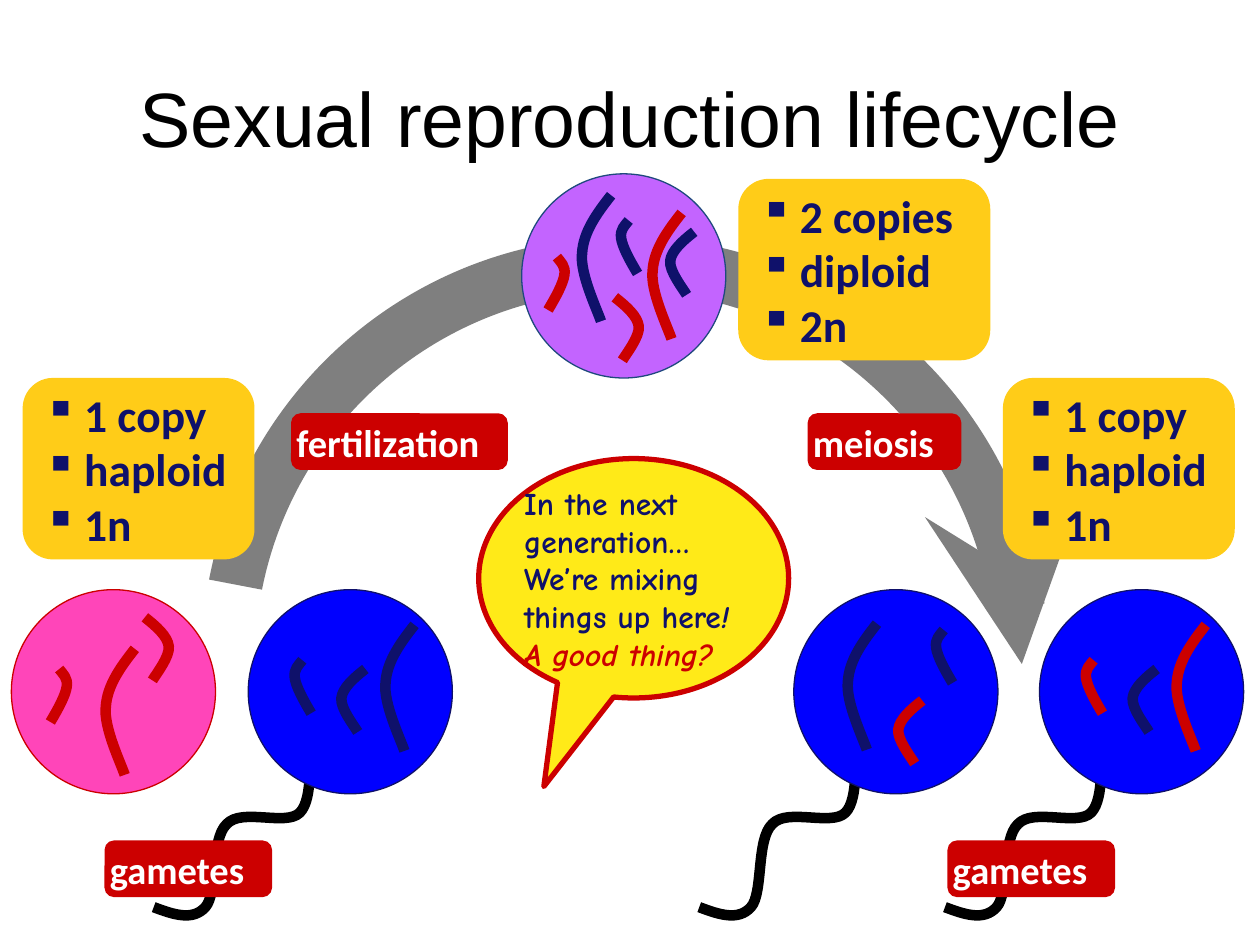
from dataclasses import dataclass

from lxml.etree import SubElement
from pptx import Presentation
from pptx.dml.color import RGBColor as Color
from pptx.enum.shapes import MSO_CONNECTOR as Connector, MSO_SHAPE as Preset
from pptx.enum.text import MSO_ANCHOR as Anchor, MSO_AUTO_SIZE as AutoSize, PP_ALIGN as Align
from pptx.oxml.ns import qn
from pptx.util import Inches, Pt

WIDTH, HEIGHT = Inches(10), Inches(7.5)
COLUMNS, ROWS = 100, 75
CELL = 16.2

# Cubic curves in grid units: a start point, then three points per segment.
STRANDS = {
    "hook": (1.4, [(0, 4.2), (0.6, 3.2), (1.2, 2.1), (1.3, 1.4),
                   (1.4, 0.7), (1, 0.4), (0.7, 0)]),
    "long": (2.5, [(2.5, 0), (1.4, 1.4), (0.3, 2.9), (0.2, 4.6),
                   (0, 6.2), (1.4, 9.1), (1.7, 10)]),
    "bend": (2, [(0, 0), (0.9, 0.7), (1.8, 1.5), (1.9, 2.3),
                 (2, 3.1), (0.9, 4.5), (0.6, 5)]),
}
TAIL = [(12.5, 0.3), (12.5, 0.1), (12.6, 0), (12.5, 1.1),
        (12.3, 2.2), (12.7, 5.8), (11.6, 6.9), (10.5, 8), (7, 6.5), (5.8, 7.8),
        (4.5, 9), (5.1, 13.3), (4.1, 14.4), (3.1, 15.5), (1.6, 15), (0, 14.4)]
TAIL_OFFSET = (-7.5, 10.8)
CYCLE_ARC = [(20.8, 46.8), (23.6, 32.7), (36.1, 22.7), (50.5, 23.1),
             (64.8, 23.5), (76.7, 34.3), (78.7, 48.5),
             (78.7, 48.5), (82.9, 47.9), (82.9, 47.9),
             (80.7, 31.6), (67.1, 19.3), (50.6, 18.8),
             (34.1, 18.3), (19.7, 29.8), (16.6, 46)]


@dataclass(frozen=True)
class Theme:
    red: str = "CC0000"
    navy: str = "0F116A"
    blue: str = "0000FF"
    pink: str = "FF45B9"
    purple: str = "C364FF"
    slate: str = "1F497D"
    gold: str = "FFCC18"
    yellow: str = "FFEA18"
    gray: str = "7F7F7F"
    black: str = "000000"
    white: str = "FFFFFF"
    thin: float = 0.75
    border: float = 3
    strand: float = 6
    arrow: float = 30

    @property
    def title(self):
        return {"name": "Arial", "size": Pt(44), "color": self.black}

    @property
    def facts(self):
        return {"name": "Calibri", "size": Pt(26), "bold": True, "color": self.navy}

    @property
    def label(self):
        return {"name": "Calibri", "size": Pt(22), "bold": True, "color": self.white}

    @property
    def speech(self):
        return {"name": "Comic Neue", "size": Pt(18), "bold": True, "color": self.navy}


class Board:
    def __init__(self, slide, theme):
        self.slide, self.theme = slide, theme

    @staticmethod
    def place(*lengths):
        """Turn alternating columns and rows into slide lengths."""
        units = (WIDTH / COLUMNS, HEIGHT / ROWS)
        return [round(length * units[i % 2]) for i, length in enumerate(lengths)]

    @staticmethod
    def paint(shape, fill=None, line=None, weight=0):
        shape.shadow.inherit = False
        if fill:
            shape.fill.solid()
            shape.fill.fore_color.rgb = Color.from_string(fill)
        else:
            shape.fill.background()
        if line:
            shape.line.color.rgb = Color.from_string(line)
            shape.line.width = Pt(weight)
        else:
            shape.line.fill.background()

    def preset(self, kind, area, **paint):
        shape = self.slide.shapes.add_shape(kind, *self.place(*area))
        self.paint(shape, **paint)
        return shape

    def curve(self, points, closed=False, **paint):
        """Build an outline, then turn each three segments into one cubic."""
        start, *rest = [self.place(*point) for point in points]
        builder = self.slide.shapes.build_freeform(*start)
        builder.add_line_segments(rest, close=closed)
        shape = builder.convert_to_shape()
        segments = list(shape._element.iter(qn("a:lnTo")))
        for first, second, third in zip(*[iter(segments)] * 3):
            first.tag = qn("a:cubicBezTo")
            for spare in (second, third):
                first.append(spare[0])
                spare.getparent().remove(spare)
        self.paint(shape, **paint)

    def arrow(self, start, end):
        arrow = self.slide.shapes.add_connector(
            Connector.STRAIGHT, *self.place(*start, *end))
        arrow.line.color.rgb = Color.from_string(self.theme.gray)
        arrow.line.width = Pt(self.theme.arrow)
        SubElement(arrow.line._get_or_add_ln(), qn("a:tailEnd"), type="stealth")
        SubElement(arrow._element.spPr, qn("a:effectLst"))

    def add_text(self, box, paragraphs, style, margins=(0, 0, 0, 0), bullet=None,
                 align=Align.LEFT, **frame_format):
        """Fill a box; each paragraph is a list of (words, style changes)."""
        frame = box.text_frame
        sides = ("margin_left", "margin_top", "margin_right", "margin_bottom")
        settings = dict(zip(sides, map(Inches, margins)))
        settings |= {"word_wrap": False, "vertical_anchor": Anchor.MIDDLE} | frame_format
        for name, value in settings.items():
            setattr(frame, name, value)
        for number, spans in enumerate(paragraphs):
            para = frame.add_paragraph() if number else frame.paragraphs[0]
            para.alignment = align
            if bullet:
                properties = para._p.get_or_add_pPr()
                properties.set("marL", str(Inches(0.32)))
                properties.set("indent", str(-Inches(0.32)))
                SubElement(properties, qn("a:buChar"), char=bullet)
            for words, changes in spans:
                for row, line in enumerate(words.split("\n")):
                    if row:
                        para.add_line_break()
                    span = para.add_run()
                    span.text = line
                    for name, value in (style | changes).items():
                        if name == "color":
                            span.font.color.rgb = Color.from_string(value)
                        else:
                            setattr(span.font, name, value)

    def title(self, words, area):
        box = self.slide.shapes.add_textbox(*self.place(*area))
        self.add_text(box, [[(words, {})]], self.theme.title,
                      align=Align.CENTER, word_wrap=True)

    def cell(self, left, top, fill, line, strands, tail=False):
        """Draw a cell; strands are (kind, column, row, colour, mirrored)."""
        if tail:
            across, down = TAIL_OFFSET
            self.curve([(left + across + x, top + down + y) for x, y in TAIL],
                       line=self.theme.black, weight=self.theme.strand)
        self.preset(Preset.OVAL, (left, top, CELL, CELL),
                    fill=fill, line=line, weight=self.theme.thin)
        for kind, column, row, color, mirrored in strands:
            width, points = STRANDS[kind]
            self.curve([(left + column + (width - x if mirrored else x), top + row + y)
                        for x, y in points], line=color, weight=self.theme.strand)

    def facts(self, left, top, width, lines):
        box = self.preset(Preset.ROUNDED_RECTANGLE, (left, top, width, 14.4),
                          fill=self.theme.gold)
        self.add_text(box, [[(line, {})] for line in lines], self.theme.facts,
                      margins=(0.1, 0, 0, 0), bullet="▪",
                      auto_size=AutoSize.SHAPE_TO_FIT_TEXT)

    def label(self, words, left, top, width):
        box = self.preset(Preset.ROUNDED_RECTANGLE, (left, top, width, 4.5),
                          fill=self.theme.red)
        self.add_text(box, [[(words, {})]], self.theme.label,
                      margins=(0.02,) * 4, auto_size=AutoSize.SHAPE_TO_FIT_TEXT)

    def callout(self, area, tip, paragraphs):
        box = self.preset(Preset.OVAL_CALLOUT, area, fill=self.theme.yellow,
                          line=self.theme.red, weight=self.theme.border)
        for index, share in enumerate(tip):
            box.adjustments[index] = share
        self.add_text(box, paragraphs, self.theme.speech)


def main():
    deck = Presentation()
    deck.slide_width, deck.slide_height = WIDTH, HEIGHT
    theme = Theme()
    board = Board(deck.slides.add_slide(deck.slide_layouts[6]), theme)
    red, navy = theme.red, theme.navy

    board.curve(CYCLE_ARC, closed=True, fill=theme.gray)
    board.arrow((80.2, 45.2), (81.1, 52.7))
    board.title("Sexual reproduction lifecycle", (5, 3, 90, 12.5))

    board.cell(0.9, 46.8, theme.pink, red, [
        ("hook", 3.1, 6.3, red, False), ("long", 7.3, 4.7, red, False),
        ("bend", 10.6, 2.2, red, False)])
    for left, color in ((19.7, navy), (82.5, red)):
        board.cell(left, 46.8, theme.blue, navy, [
            ("long", 10.7, 2.8, color, False), ("hook", 3.6, 5.6, color, True),
            ("bend", 7.3, 6.3, navy, True)], tail=True)
    board.cell(63, 46.8, theme.blue, navy, [
        ("long", 4.1, 2.7, navy, False), ("hook", 11.2, 3.2, navy, True),
        ("bend", 8.2, 8.8, red, True)], tail=True)
    board.cell(41.4, 13.8, theme.purple, theme.slate, [
        ("hook", 2.1, 6.6, red, False), ("long", 10.2, 3.1, red, False),
        ("bend", 7.4, 9.8, red, False), ("long", 4.6, 1.7, navy, False),
        ("hook", 7.8, 3.7, navy, True), ("bend", 11.7, 4.6, navy, True)])

    haploid = ("1 copy", "haploid", "1n")
    board.facts(1.8, 30, 18.4, haploid)
    board.facts(58.6, 14.2, 20, ("2 copies", "diploid", "2n"))
    board.facts(79.6, 30, 18.4, haploid)
    board.label("meiosis", 64.1, 32.8, 12.2)
    board.label("fertilization", 23.1, 32.8, 17.2)
    board.callout((38, 36.4, 24.6, 19), (-0.29, 0.87), [
        [("In the next\ngeneration…\nWe’re mixing", {})],
        [("things up here", {}), ("!", {"italic": True})],
        [("A good thing?", {"italic": True, "color": red})]])
    for left in (8.3, 75.2):
        board.label("gametes", left, 66.7, 13.3)

    deck.save("out.pptx")


if __name__ == "__main__":
    main()
